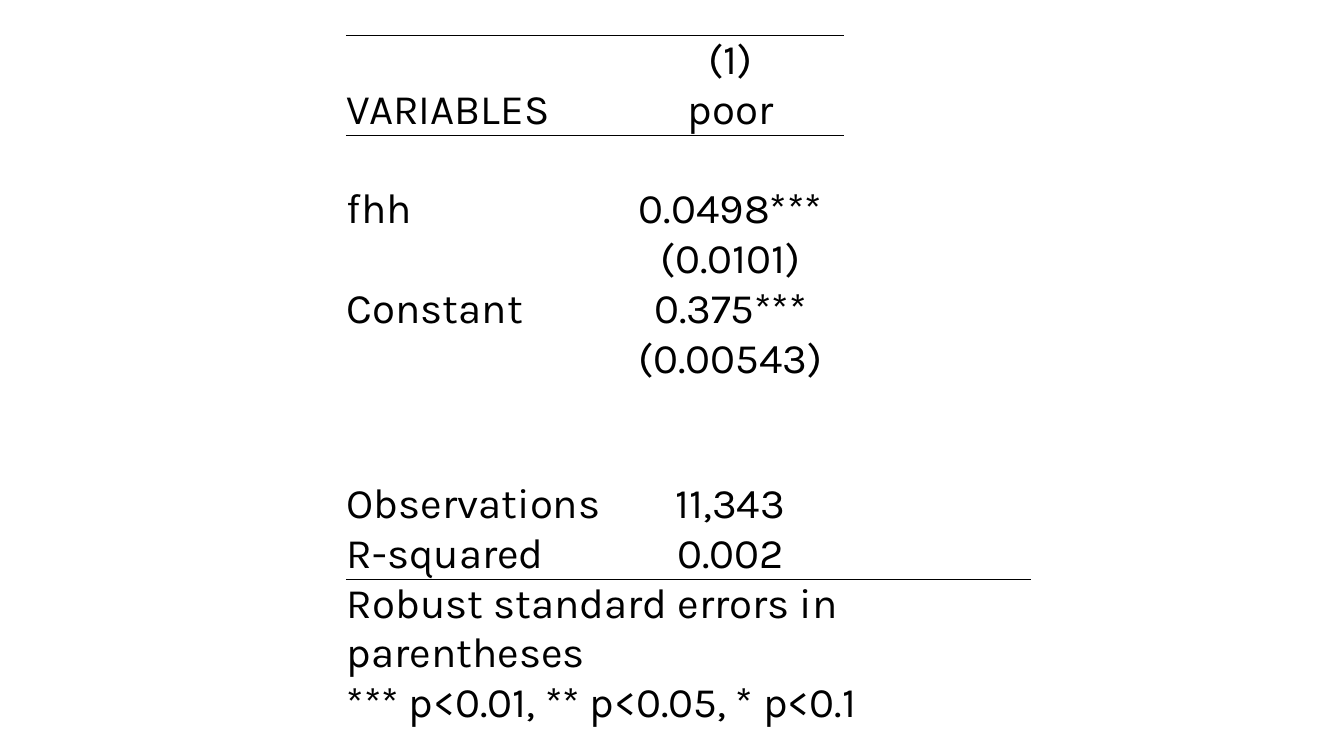
from dataclasses import dataclass

from lxml.etree import SubElement
from pptx import Presentation
from pptx.dml.color import RGBColor
from pptx.enum.text import MSO_ANCHOR, PP_ALIGN
from pptx.oxml.ns import qn
from pptx.util import Inches, Pt


@dataclass(frozen=True)
class Theme:
    font: str = "Karla"
    size: int = 30
    ink: str = "000000"
    rule: float = 0.5
    plain_style: str = "{2D5ABB26-0587-4C30-8999-92F81FD0307C}"


THEME = Theme()
ROW_HEIGHT = 0.48
COLUMN_WIDTHS = (2.69, 2.25, 0.93, 0.93)
RESULTS = (
    ("", "(1)"),
    ("VARIABLES", "poor"),
    ("", ""),
    ("fhh", "0.0498***"),
    ("", "(0.0101)"),
    ("Constant", "0.375***"),
    ("", "(0.00543)"),
    ("", ""),
    ("Observations", "11,343"),
    ("R-squared", "0.002"),
)
NOTES = ("Robust standard errors in parentheses", "*** p<0.01, ** p<0.05, * p<0.1")
TALL_ROWS = ("Observations", NOTES[0])
RULES = {0: "a:lnT", 1: "a:lnB", len(RESULTS) - 1: "a:lnB"}
CELL_FORMAT = {
    "vertical_anchor": MSO_ANCHOR.BOTTOM,
    "margin_left": Inches(0.01),
    "margin_right": Inches(0.01),
    "margin_top": Inches(0.01),
    "margin_bottom": Inches(0),
}
FONT_FORMAT = {"name": THEME.font, "size": Pt(THEME.size), "bold": False}


def set_format(target, values):
    for name, value in values.items():
        setattr(target, name, value)


def add_plain_table(s, rows):
    frame = s.shapes.add_table(
        rows, len(COLUMN_WIDTHS), Inches(3.43), Inches(0.35),
        Inches(sum(COLUMN_WIDTHS)), Inches(ROW_HEIGHT * rows),
    )
    table = frame.table
    set_format(table, {"first_row": False, "horz_banding": False})
    frame.element.find(".//" + qn("a:tableStyleId")).text = THEME.plain_style
    for column, width in zip(table.columns, COLUMN_WIDTHS):
        column.width = Inches(width)
    for row in table.rows:
        for cell in row.cells:
            set_format(cell, CELL_FORMAT)
            cell.fill.background()
    return table


def write_cell(cell, text, align):
    if not text:
        return
    p = cell.text_frame.paragraphs[0]
    p.alignment = align
    r = p.add_run()
    r.text = text
    set_format(r.font, FONT_FORMAT)
    r.font.color.rgb = RGBColor.from_string(THEME.ink)


def add_rule(cell, side):
    props = cell._tc.get_or_add_tcPr()
    line = SubElement(props, qn(side), w=str(Pt(THEME.rule)))
    fill = SubElement(line, qn("a:solidFill"))
    SubElement(fill, qn("a:srgbClr"), val=THEME.ink)
    props.insert(0, line)


def fill_results(table):
    for i, texts in enumerate(RESULTS):
        for j, (text, align) in enumerate(zip(texts, (PP_ALIGN.LEFT, PP_ALIGN.CENTER))):
            cell = table.cell(i, j)
            write_cell(cell, text, align)
            if i in RULES:
                add_rule(cell, RULES[i])


def fill_notes(table):
    for i, note in enumerate(NOTES, len(RESULTS)):
        cell = table.cell(i, 0)
        cell.merge(table.cell(i, len(COLUMN_WIDTHS) - 1))
        write_cell(cell, note, PP_ALIGN.LEFT)


def set_row_heights(table):
    for row in table.rows:
        lines = 2 if row.cells[0].text_frame.text in TALL_ROWS else 1
        row.height = Inches(ROW_HEIGHT * lines)


def main():
    prs = Presentation()
    set_format(prs, {"slide_width": Inches(13.33), "slide_height": Inches(7.5)})
    s = prs.slides.add_slide(prs.slide_layouts[6])
    table = add_plain_table(s, len(RESULTS) + len(NOTES))
    fill_results(table)
    fill_notes(table)
    set_row_heights(table)
    prs.save("out.pptx")


if __name__ == "__main__":
    main()
